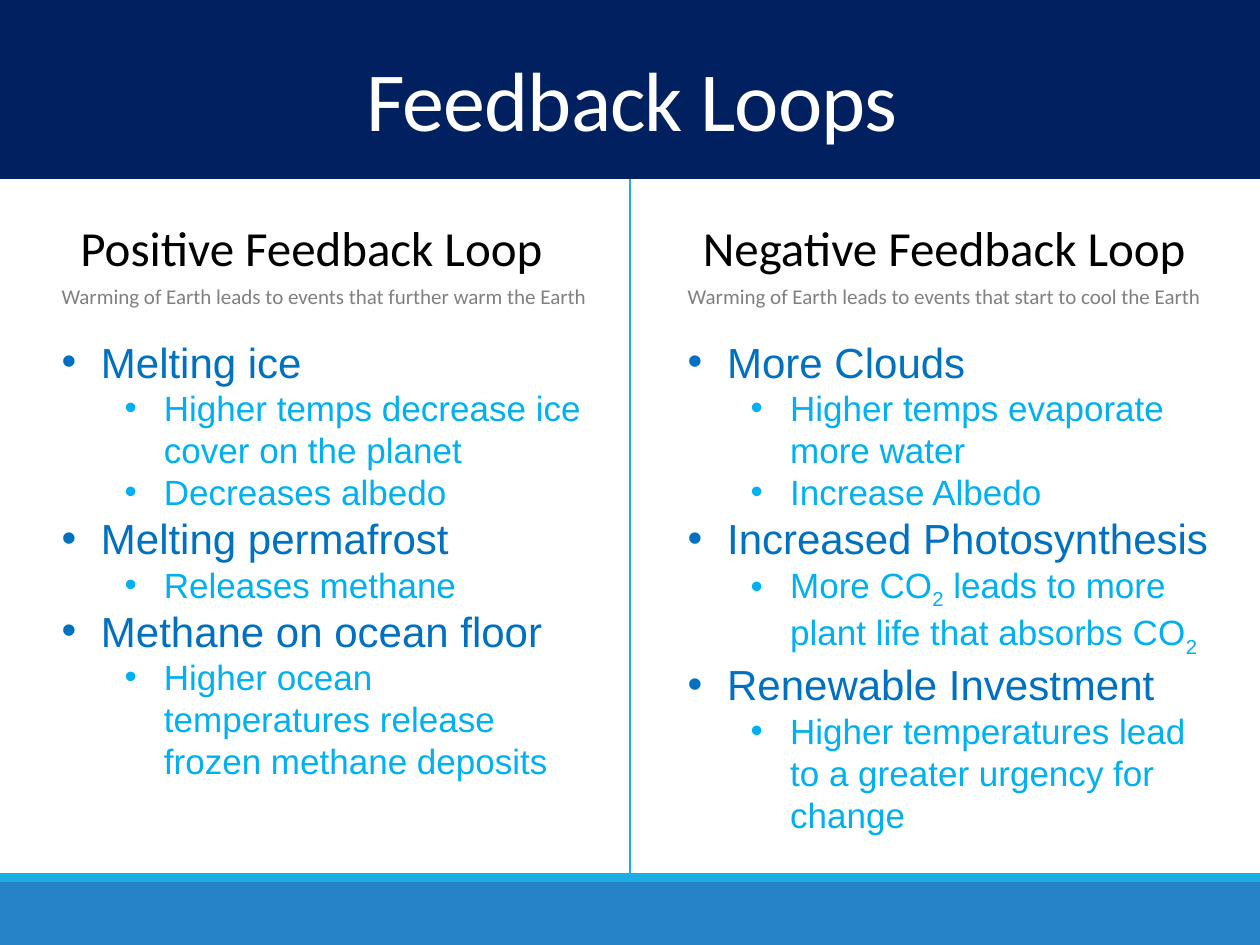
from lxml.etree import SubElement
from pptx import Presentation
from pptx.dml.color import RGBColor
from pptx.enum.shapes import MSO_CONNECTOR, MSO_SHAPE
from pptx.enum.text import MSO_ANCHOR, MSO_AUTO_SIZE, PP_ALIGN
from pptx.oxml.ns import qn
from pptx.util import Pt

TITLE = "Feedback Loops"
# Text between bars is subscript; each topic has a list of details.
COLUMNS = [
    {
        "heading": ("Positive Feedback Loop", 38.9, 281.5),
        "summary": "Warming of Earth leads to events that further warm the Earth",
        "left": 28.1, "width": 314.6, "height": 264,
        "topics": [
            ("Melting ice", ["Higher temps decrease ice cover on the planet",
                             "Decreases albedo"]),
            ("Melting permafrost", ["Releases methane"]),
            ("Methane on ocean floor",
             ["Higher ocean temperatures release frozen methane deposits"]),
        ],
    },
    {
        "heading": ("Negative Feedback Loop", 394.6, 290.9),
        "summary": "Warming of Earth leads to events that start to cool the Earth",
        "left": 385.9, "width": 320.4, "height": 289,
        "topics": [
            ("More Clouds", ["Higher temps evaporate more water", "Increase Albedo"]),
            ("Increased Photosynthesis",
             ["More CO|2| leads to more plant life that absorbs CO|2"]),
            ("Renewable Investment",
             ["Higher temperatures lead to a greater urgency for change"]),
        ],
    },
]
BANDS = [(504, 36, "2683C6"), (499, 5, "1CADE4"), (0, 102.2, "002060")]
# Indent, size and colour of topics and details
LEVELS = [(22.5, 24, "0070C0"), (58.5, 20, "00B0F0")]
HANGING = 22.5


def color(hex_text):
    return RGBColor.from_string(hex_text)


def style(span, font, size, hex_text):
    span.font.name = font
    span.font.size = Pt(size)
    span.font.color.rgb = color(hex_text)


def add_box(left, top, width, height, wrap=False):
    box = slide.shapes.add_textbox(Pt(left), Pt(top), Pt(width), Pt(height))
    box.text_frame.word_wrap = wrap
    return box.text_frame


def add_label(text, left, top, width, height, size, hex_text):
    para = add_box(left, top, width, height).paragraphs[0]
    para.text = text
    style(para.runs[0], "Calibri", size, hex_text)


def add_bullet(para, text, level):
    indent, size, hex_text = LEVELS[level]
    para.level = level
    properties = para._p.get_or_add_pPr()
    properties.set("marL", str(Pt(indent)))
    properties.set("indent", str(-Pt(HANGING)))
    SubElement(properties, qn("a:buFont"), typeface="Arial")
    SubElement(properties, qn("a:buChar"), char="•")
    for index, piece in enumerate(text.split("|")):
        span = para.add_run()
        span.text = piece
        style(span, "Arial", size, hex_text)
        if index % 2:
            span.font._element.set("baseline", "-25000")


deck = Presentation()
deck.slide_width, deck.slide_height = Pt(720), Pt(540)
slide = deck.slides.add_slide(deck.slide_layouts[5])

for top, height, fill in BANDS:
    band = slide.shapes.add_shape(MSO_SHAPE.RECTANGLE, 0, Pt(top), Pt(720), Pt(height))
    band.shadow.inherit = False
    band.fill.solid()
    band.fill.fore_color.rgb = color(fill)
    band.line.fill.background()

title = slide.shapes.title
title.element.getparent().append(title.element)  # in front of the banner
title.left, title.top, title.width, title.height = Pt(2.2), Pt(30), Pt(717.8), Pt(60.5)
frame = title.text_frame
frame.text = TITLE
frame.auto_size = MSO_AUTO_SIZE.NONE
frame.vertical_anchor = MSO_ANCHOR.MIDDLE
para = frame.paragraphs[0]
para.alignment = PP_ALIGN.CENTER
para.line_spacing = 0.85
style(para.runs[0], "Calibri", 48, "FFFFFF")
para.runs[0].font._element.set("spc", "-50")

divider = slide.shapes.add_connector(MSO_CONNECTOR.STRAIGHT,
                                     Pt(360), Pt(102.2), Pt(360), Pt(500))
divider.line.color.rgb = color("1CADE4")
divider.line.width = Pt(1)
SubElement(divider.element.spPr, qn("a:effectLst"))

for column in COLUMNS:
    left, width = column["left"], column["width"]
    heading, heading_left, heading_width = column["heading"]
    add_label(heading, heading_left, 121, heading_width, 41, 28, "000000")
    add_label(column["summary"], left, 158.4, width, 21.8, 12, "808080")
    frame = add_box(left, 188.6, width, column["height"], wrap=True)
    bullets = [(text, level) for topic, details in column["topics"]
               for text, level in [(topic, 0)] + [(detail, 1) for detail in details]]
    for index, (text, level) in enumerate(bullets):
        para = frame.add_paragraph() if index else frame.paragraphs[0]
        add_bullet(para, text, level)

deck.save("out.pptx")
